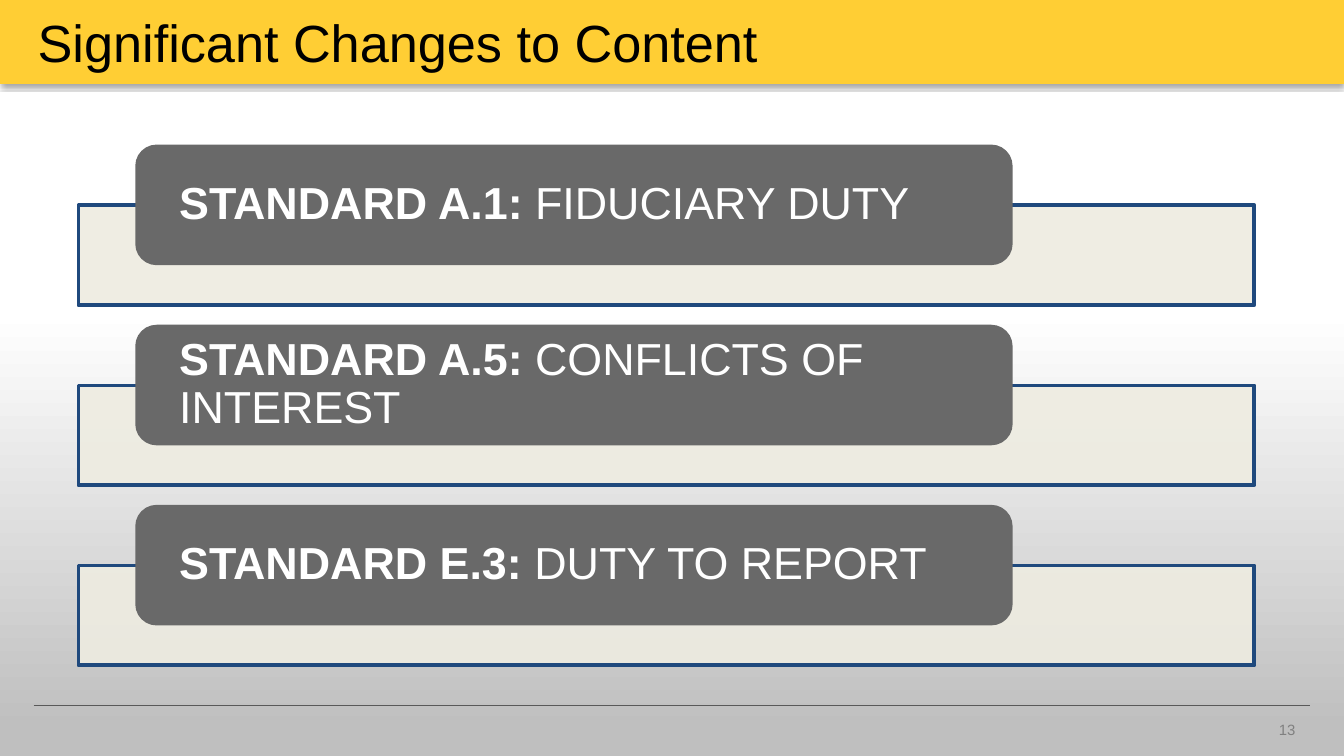
from lxml.etree import SubElement
from pptx import Presentation
from pptx.dml.color import RGBColor
from pptx.enum.shapes import MSO_CONNECTOR, MSO_SHAPE
from pptx.enum.text import MSO_ANCHOR, MSO_AUTO_SIZE, PP_ALIGN
from pptx.oxml import parse_xml
from pptx.oxml.ns import nsdecls, qn
from pptx.util import Pt

GOLD = RGBColor(0xFF, 0xCE, 0x34)
SILVER = RGBColor(0xBF, 0xBF, 0xBF)
WHITE = RGBColor(0xFF, 0xFF, 0xFF)
BLACK = RGBColor(0x00, 0x00, 0x00)
CREAM = RGBColor(0xEE, 0xEC, 0xE1)
NAVY = RGBColor(0x1F, 0x49, 0x7D)
SLATE = RGBColor(0x69, 0x69, 0x69)
RULE = RGBColor(0x59, 0x59, 0x59)
GREY = RGBColor(0x80, 0x80, 0x80)

WIDTH, HEIGHT = 720, 405
TOP, STEP = 78.5, 96.5
ITEMS = [
    ("STANDARD A.1:", " FIDUCIARY DUTY"),
    ("STANDARD A.5:", " CONFLICTS OF INTEREST"),
    ("STANDARD E.3:", " DUTY TO REPORT"),
]
SHADOW = (
    f'<a:effectLst {nsdecls("a")}>'
    '<a:outerShdw blurRad="39370" dist="22860" dir="5400000" rotWithShape="0">'
    '<a:srgbClr val="000000"><a:alpha val="35000"/></a:srgbClr>'
    '</a:outerShdw></a:effectLst>'
)


class Deck:
    def __init__(self, slide, font="Arial"):
        self.slide = slide
        self.shapes = slide.shapes
        self.font = font

    def style(self, run, size, color, bold=False):
        font = run.font
        font.name, font.size, font.bold = self.font, Pt(size), bold
        font.color.rgb = color

    def shape(self, kind, box, fill, line=None):
        item = self.shapes.add_shape(kind, *map(Pt, box))
        item.shadow.inherit = False
        item.fill.solid()
        item.fill.fore_color.rgb = fill
        if line is None:
            item.line.fill.background()
        else:
            item.line.color.rgb = line
            item.line.width = Pt(2)
        return item

    def panel(self, box, fill):
        """Add a borderless rectangle with a soft shadow below it."""
        item = self.shape(MSO_SHAPE.RECTANGLE, box, fill)
        props = item.element.spPr
        props.replace(props.find(qn("a:effectLst")), parse_xml(SHADOW))
        return item

    def fade(self, box, low, high):
        """Add a panel that runs from low at the bottom to high above."""
        fill = self.panel(box, low).fill
        fill.gradient()
        fill.gradient_angle = 90
        for stop, color, place in zip(fill.gradient_stops, (low, high), (0.04, 0.67)):
            stop.color.rgb = color
            stop.position = place

    def rule(self, left, right, y):
        line = self.shapes.add_connector(
            MSO_CONNECTOR.STRAIGHT, Pt(left), Pt(y), Pt(right), Pt(y))
        line.line.color.rgb = RULE
        line.line.width = Pt(0.75)
        SubElement(line.element.spPr, qn("a:effectLst"))

    def bar(self, top):
        item = self.shape(MSO_SHAPE.RECTANGLE, (42, top, 630, 53.5), CREAM, NAVY)
        color = item.element.spPr.find(qn("a:solidFill"))[0]
        SubElement(color, qn("a:alpha"), val="90000")

    def label(self, top, code, name):
        item = self.shape(
            MSO_SHAPE.ROUNDED_RECTANGLE, (73.5, top, 468, 62.6), SLATE, SLATE)
        frame = item.text_frame
        frame.word_wrap = True
        frame.vertical_anchor = MSO_ANCHOR.MIDDLE
        frame.margin_left = frame.margin_right = Pt(19.5)
        frame.margin_top = frame.margin_bottom = 0
        para = frame.paragraphs[0]
        para.text = code
        para.add_run().text = name
        para.alignment = PP_ALIGN.LEFT
        para.line_spacing = 0.9
        for run, bold in zip(para.runs, (True, False)):
            self.style(run, 24, WHITE, bold)

    def title(self, text, box):
        item = self.shapes.title
        item.left, item.top, item.width, item.height = map(Pt, box)
        item.element.getparent().append(item.element)  # bring to front
        frame = item.text_frame
        frame.text = text
        frame.auto_size = MSO_AUTO_SIZE.NONE
        frame.vertical_anchor = MSO_ANCHOR.MIDDLE
        frame.paragraphs[0].alignment = PP_ALIGN.LEFT
        self.style(frame.paragraphs[0].runs[0], 28, BLACK)

    def note(self, text, box, size, color):
        frame = self.shapes.add_textbox(*map(Pt, box)).text_frame
        frame.word_wrap = True
        frame.text = text
        self.style(frame.paragraphs[0].runs[0], size, color)


def main():
    prs = Presentation()
    prs.slide_width, prs.slide_height = Pt(WIDTH), Pt(HEIGHT)
    deck = Deck(prs.slides.add_slide(prs.slide_layouts[5]))

    deck.panel((0, 0, WIDTH, 45), GOLD)
    deck.fade((0, 49.5, WIDTH, HEIGHT - 49.5), SILVER, WHITE)
    deck.rule(18, 702, 378)
    for row, (code, name) in enumerate(ITEMS):
        top = TOP + row * STEP
        deck.bar(top + 31.5)
        deck.label(top, code, name)
    deck.title("Significant Changes to Content", (13, 0, 544, 45))
    deck.note("13", (678, 382.5, 42, 21.5), 8, GREY)
    prs.save("out.pptx")


if __name__ == "__main__":
    main()
